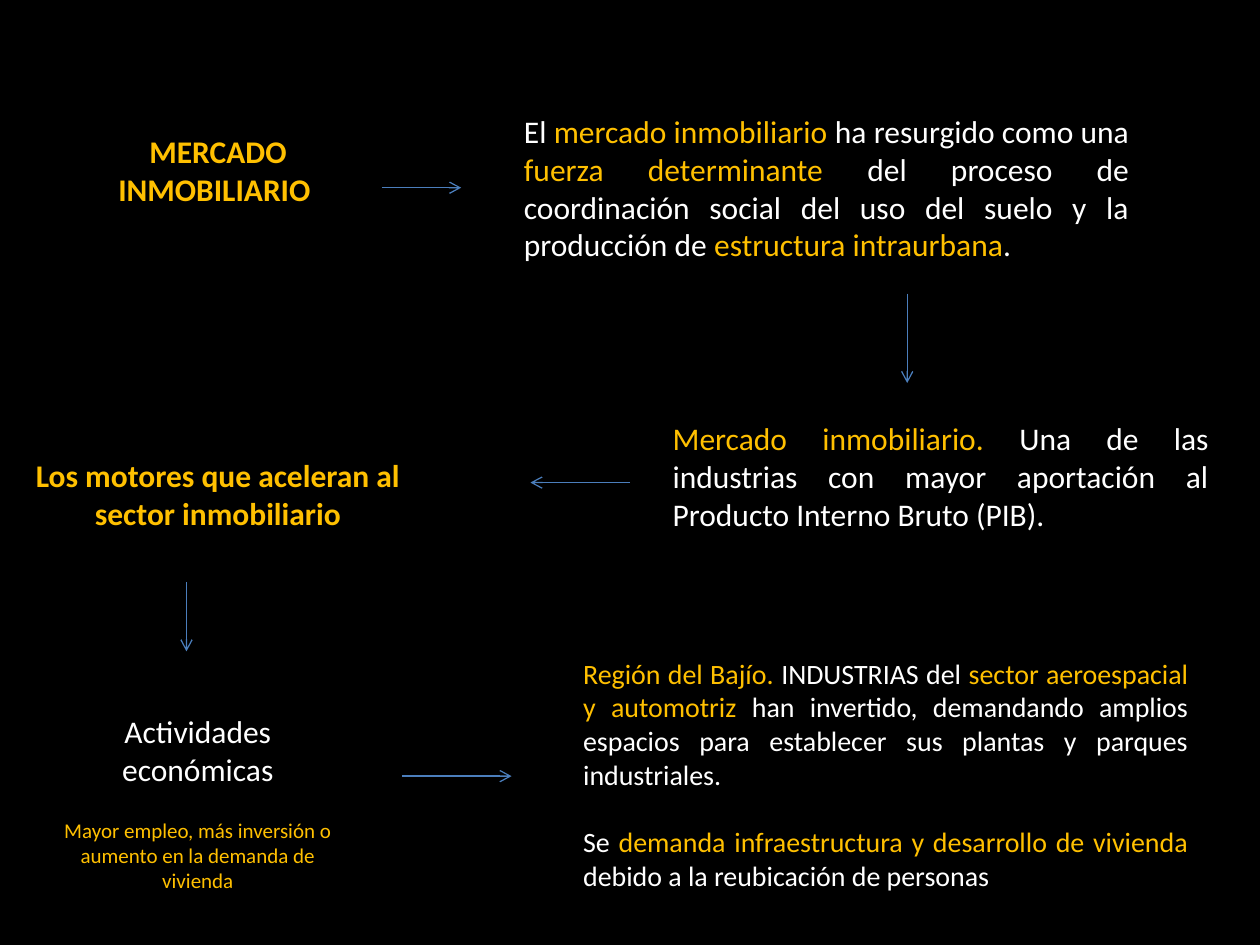
from dataclasses import dataclass

from lxml import etree
from pptx import Presentation
from pptx.dml.color import RGBColor
from pptx.enum.shapes import MSO_CONNECTOR
from pptx.enum.text import MSO_ANCHOR, MSO_AUTO_SIZE, PP_ALIGN
from pptx.oxml.ns import qn
from pptx.util import Inches, Pt

CENTER, JUSTIFY = PP_ALIGN.CENTER, PP_ALIGN.JUSTIFY
TOP = MSO_ANCHOR.TOP
NO_AUTOFIT = MSO_AUTO_SIZE.NONE
STRAIGHT = MSO_CONNECTOR.STRAIGHT
TITLE_ONLY_LAYOUT = 5


@dataclass(frozen=True)
class Theme:
    font: str = "Calibri"
    background: RGBColor = RGBColor(0x00, 0x00, 0x00)
    plain: RGBColor = RGBColor(0xFF, 0xFF, 0xFF)
    accent: RGBColor = RGBColor(0xFF, 0xC0, 0x00)
    arrow: RGBColor = RGBColor(0x4B, 0x7E, 0xBC)
    arrow_width: float = 0.75
    large: int = 18
    medium: int = 16
    small: int = 12


THEME = Theme()


@dataclass(frozen=True)
class Span:
    text: str
    accent: bool = False
    bold: bool = False


@dataclass(frozen=True)
class Para:
    spans: tuple[Span, ...]
    size: int = THEME.large
    gap_before: float = 0


@dataclass(frozen=True)
class Block:
    left: float
    top: float
    width: float
    height: float
    align: PP_ALIGN
    paras: tuple[Para, ...]


@dataclass(frozen=True)
class Arrow:
    x1: float
    y1: float
    x2: float
    y2: float


HEADING = Block(0.43, 1, 2.6, 0.71, CENTER, (
    Para((Span("MERCADO INMOBILIARIO ", True, True),)),
))

BLOCKS = (
    Block(4.06, 0.84, 5, 1.31, JUSTIFY, (
        Para((
            Span("El "),
            Span("mercado inmobiliario ", True),
            Span("ha resurgido como una "),
            Span("fuerza determinante ", True),
            Span("del proceso de coordinación social del uso del suelo y la producción de "),
            Span("estructura intraurbana", True),
            Span(". "),
        )),
    )),
    Block(5.24, 3.28, 4.45, 1.01, JUSTIFY, (
        Para((
            Span("Mercado inmobiliario. ", True),
            Span("Una de las industrias con mayor aportación al Producto Interno Bruto (PIB)."),
        )),
    )),
    Block(0.14, 3.57, 3.18, 0.71, CENTER, (
        Para((Span("Los motores que aceleran al sector inmobiliario", True, True),)),
    )),
    Block(0.35, 5.6, 2.44, 1.55, CENTER, (
        Para((Span("Actividades económicas"),)),
        Para((Span("Mayor empleo, más inversión o aumento en la demanda de vivienda", True),),
             THEME.small, 17),
    )),
    Block(4.53, 5.16, 5, 1.99, JUSTIFY, (
        Para((
            Span("Región del Bajío. ", True),
            Span("INDUSTRIAS del "),
            Span("sector aeroespacial y automotriz ", True),
            Span("han invertido, demandando amplios espacios para establecer "
                 "sus plantas y parques industriales."),
        ), THEME.medium),
        Para((
            Span("Se "),
            Span("demanda infraestructura y desarrollo de vivienda ", True),
            Span("debido a la reubicación de personas"),
        ), THEME.medium, 19.5),
    )),
)

ARROWS = (
    Arrow(3.03, 1.49, 3.66, 1.49),
    Arrow(7.2, 2.33, 7.2, 3.04),
    Arrow(5, 3.83, 4.21, 3.83),
    Arrow(1.48, 4.62, 1.48, 5.17),
    Arrow(3.19, 6.16, 4.06, 6.16),
)


def fill_block(box, block: Block) -> None:
    """Place a text box or placeholder and write its formatted paragraphs."""
    box.left, box.top = Inches(block.left), Inches(block.top)
    box.width, box.height = Inches(block.width), Inches(block.height)
    frame = box.text_frame
    frame.word_wrap = True
    frame.auto_size = NO_AUTOFIT
    frame.vertical_anchor = TOP
    for index, para in enumerate(block.paras):
        paragraph = frame.add_paragraph() if index else frame.paragraphs[0]
        paragraph.alignment = block.align
        paragraph.space_before = Pt(para.gap_before)
        for span in para.spans:
            run = paragraph.add_run()
            run.text = span.text
            run.font.name = THEME.font
            run.font.size = Pt(para.size)
            run.font.bold = span.bold
            run.font.color.rgb = THEME.accent if span.accent else THEME.plain


def add_block(page, block: Block) -> None:
    box = page.shapes.add_textbox(0, 0, 0, 0)
    fill_block(box, block)


def add_arrow(page, arrow: Arrow) -> None:
    connector = page.shapes.add_connector(
        STRAIGHT, Inches(arrow.x1), Inches(arrow.y1), Inches(arrow.x2), Inches(arrow.y2))
    connector.line.color.rgb = THEME.arrow
    connector.line.width = Pt(THEME.arrow_width)
    etree.SubElement(connector.line._get_or_add_ln(), qn("a:tailEnd"), type="arrow")
    etree.SubElement(connector._element.spPr, qn("a:effectLst"))


def main() -> None:
    deck = Presentation()
    deck.slide_width, deck.slide_height = Inches(10), Inches(7.5)
    page = deck.slides.add_slide(deck.slide_layouts[TITLE_ONLY_LAYOUT])
    page.background.fill.solid()
    page.background.fill.fore_color.rgb = THEME.background
    fill_block(page.shapes.title, HEADING)
    for block in BLOCKS:
        add_block(page, block)
    for arrow in ARROWS:
        add_arrow(page, arrow)
    deck.save("out.pptx")


if __name__ == "__main__":
    main()
